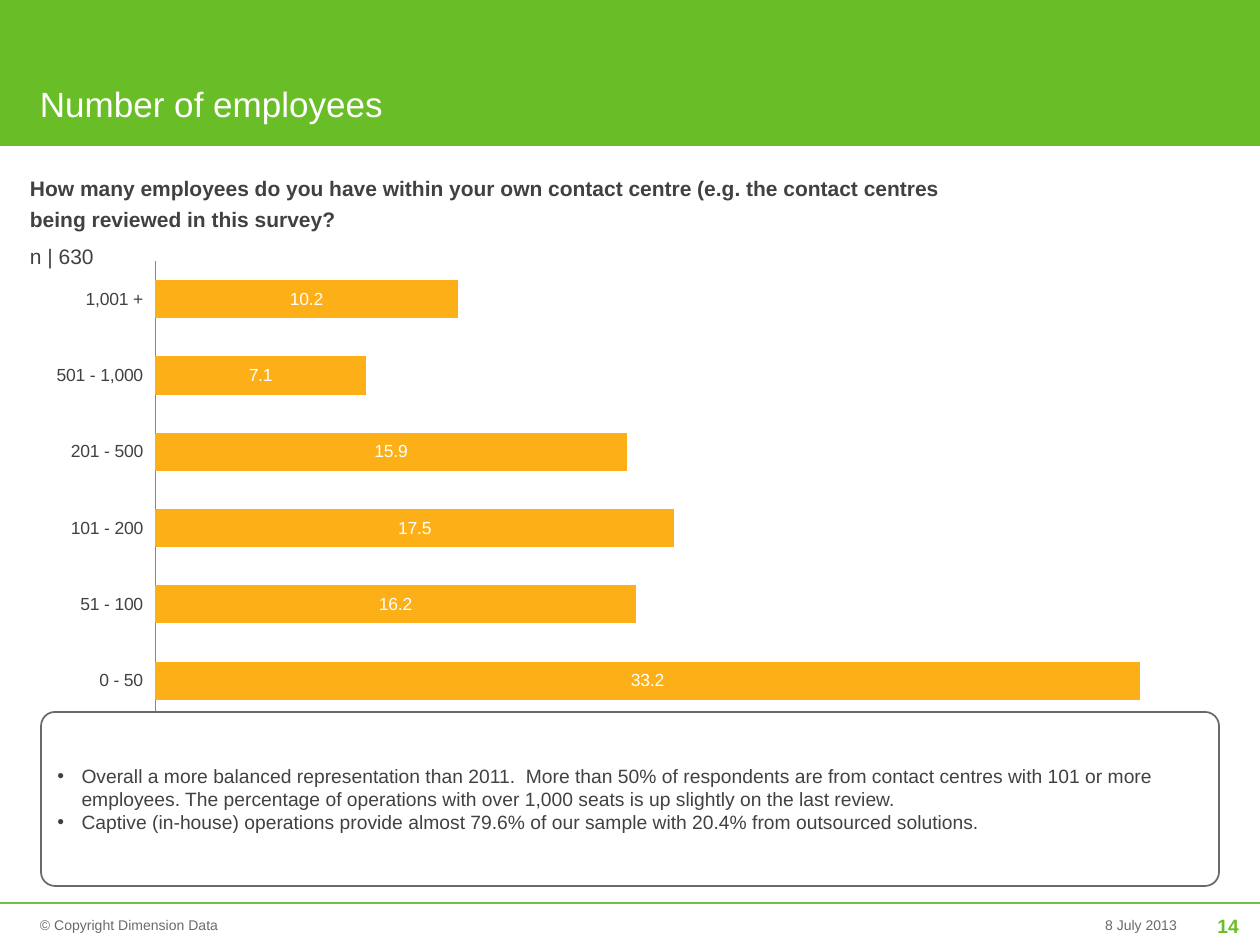
"""Build the survey slide on the number of contact centre employees."""
from lxml.etree import SubElement
from pptx import Presentation
from pptx.chart.data import CategoryChartData
from pptx.dml.color import RGBColor
from pptx.enum.chart import XL_CHART_TYPE, XL_LABEL_POSITION, XL_TICK_LABEL_POSITION, XL_TICK_MARK
from pptx.enum.shapes import MSO_CONNECTOR, MSO_SHAPE
from pptx.enum.text import MSO_ANCHOR, PP_ALIGN
from pptx.oxml import parse_xml
from pptx.oxml.ns import nsdecls, qn
from pptx.util import Emu, Pt

COLORS = {
    "green": "69BE28",
    "rule": "72BF44",
    "orange": "FCAF17",
    "text": "414141",
    "grey": "6A6A6A",
    "white": "FFFFFF",
}
SCALE = 914400 / 126


def px(*lengths):
    """Turn px lengths into a list of EMU lengths."""
    return [Emu(round(length * SCALE)) for length in lengths]


def write_text(shape, lines, size, color, bold=False, align=PP_ALIGN.LEFT, spacing=1.0, gap=0):
    """Fill a shape with paragraphs that share one format."""
    frame = shape.text_frame
    frame.text = "\n".join(lines)
    for index, paragraph in enumerate(frame.paragraphs):
        paragraph.alignment = align
        paragraph.line_spacing = spacing
        paragraph.space_before = Pt(gap if index else 0)
        paragraph.space_after = Pt(gap)
        for run in paragraph.runs:
            run.font.name = "Arial"
            run.font.size = Pt(size)
            run.font.bold = bold
            run.font.color.rgb = RGBColor.from_string(COLORS[color])
    return frame


presentation = Presentation()
presentation.slide_width, presentation.slide_height = px(1260, 945)
slide = presentation.slides.add_slide(presentation.slide_layouts[6])

banner = slide.shapes.add_shape(MSO_SHAPE.RECTANGLE, *px(0, 0, 1260, 146))
banner.shadow.inherit = False
banner.fill.solid()
banner.fill.fore_color.rgb = RGBColor.from_string(COLORS["green"])
banner.line.fill.background()

footer_rule = slide.shapes.add_connector(MSO_CONNECTOR.STRAIGHT, *px(0, 903, 1260, 903))
footer_rule.line.color.rgb = RGBColor.from_string(COLORS["rule"])
footer_rule.line.width = Pt(1.5)
SubElement(footer_rule.element.spPr, qn("a:effectLst"))

chart_data = CategoryChartData(number_format="0.0")
chart_data.categories = ["0 - 50", "51 - 100", "101 - 200", "201 - 500", "501 - 1,000", "1,001 +"]
chart_data.add_series("Series 1", [33.2, 16.2, 17.5, 15.9, 7.1, 10.2])
chart = slide.shapes.add_chart(XL_CHART_TYPE.BAR_CLUSTERED, *px(40, 252, 1178, 476), chart_data).chart
chart.has_legend = False
chart.has_title = False
chart.font.name = "Arial"
chart.font.size = Pt(10)
chart.font.color.rgb = RGBColor.from_string(COLORS["text"])

category_axis = chart.category_axis
category_axis.major_tick_mark = XL_TICK_MARK.NONE
category_axis.tick_label_position = XL_TICK_LABEL_POSITION.LOW
category_axis.format.line.color.rgb = RGBColor.from_string("868686")
value_axis = chart.value_axis
value_axis.minimum_scale = 0
value_axis.maximum_scale = 35
value_axis.has_major_gridlines = False
value_axis.visible = False

plot = chart.plots[0]
plot.gap_width = 100
plot.vary_by_categories = False
bars = plot.series[0].format.fill
bars.solid()
bars.fore_color.rgb = RGBColor.from_string(COLORS["orange"])
plot.has_data_labels = True
labels = plot.data_labels
labels.show_value = True
labels.number_format = "0.0"
labels.number_format_is_linked = False
labels.position = XL_LABEL_POSITION.CENTER
labels.font.name = "Arial"
labels.font.size = Pt(10)
labels.font.color.rgb = RGBColor.from_string(COLORS["white"])

plot_area = chart.element.find(".//" + qn("c:plotArea"))
for old_layout in plot_area.findall(qn("c:layout")):
    plot_area.remove(old_layout)
plot_area.insert(0, parse_xml(
    f'<c:layout {nsdecls("c")}><c:manualLayout><c:layoutTarget val="inner"/>'
    '<c:xMode val="edge"/><c:yMode val="edge"/><c:x val="0.098"/><c:y val="0.019"/>'
    '<c:w val="0.881"/><c:h val="0.962"/></c:manualLayout></c:layout>'
))

text_boxes = [
    ((40, 903, 590, 42), ["© Copyright Dimension Data"], MSO_ANCHOR.MIDDLE,
     dict(size=8, color="grey", spacing=1.1, gap=0.1)),
    ((945, 903, 232, 42), ["8 July 2013"], MSO_ANCHOR.MIDDLE,
     dict(size=8, color="grey", align=PP_ALIGN.RIGHT, spacing=1.1, gap=0.1)),
    ((1187, 903, 52, 43), ["14"], MSO_ANCHOR.MIDDLE,
     dict(size=11, color="green", bold=True, align=PP_ALIGN.RIGHT, spacing=1.1, gap=0.1)),
    ((40, 10, 883, 115), ["Number of employees"], MSO_ANCHOR.BOTTOM,
     dict(size=20, color="white", spacing=1.2, gap=2)),
    ((30, 171, 958, 105),
     ["How many employees do you have within your own contact centre "
      "(e.g. the contact centres being reviewed in this survey?", "n | 630"], MSO_ANCHOR.TOP,
     dict(size=12, color="text", bold=True, spacing=1.2, gap=2)),
]
for place, lines, anchor, style in text_boxes:
    frame = write_text(slide.shapes.add_textbox(*px(*place)), lines, **style)
    frame.word_wrap = True
    frame.vertical_anchor = anchor
    frame.margin_left = frame.margin_right = frame.margin_top = frame.margin_bottom = 0
sample_size = frame.paragraphs[1].runs[0]
sample_size.font.bold = False

findings = slide.shapes.add_shape(MSO_SHAPE.ROUNDED_RECTANGLE, *px(41, 712, 1178, 174))
findings.shadow.inherit = False
findings.adjustments[0] = 0.08
findings.fill.solid()
findings.fill.fore_color.rgb = RGBColor.from_string(COLORS["white"])
findings.line.color.rgb = RGBColor.from_string(COLORS["grey"])
findings.line.width = Pt(1)
frame = write_text(findings, [
    "Overall a more balanced representation than 2011.  More than 50% of respondents are from "
    "contact centres with 101 or more employees. The percentage of operations with over 1,000 "
    "seats is up slightly on the last review.",
    "Captive (in-house) operations provide almost 79.6% of our sample with 20.4% from "
    "outsourced solutions.",
], size=11, color="text")
frame.word_wrap = True
frame.vertical_anchor = MSO_ANCHOR.MIDDLE
indent = px(24)[0]
for paragraph in frame.paragraphs:
    properties = paragraph._p.get_or_add_pPr()
    properties.set("marL", str(indent))
    properties.set("indent", str(-indent))
    SubElement(properties, qn("a:buFont")).set("typeface", "Arial")
    SubElement(properties, qn("a:buChar")).set("char", "•")

presentation.save("out.pptx")
